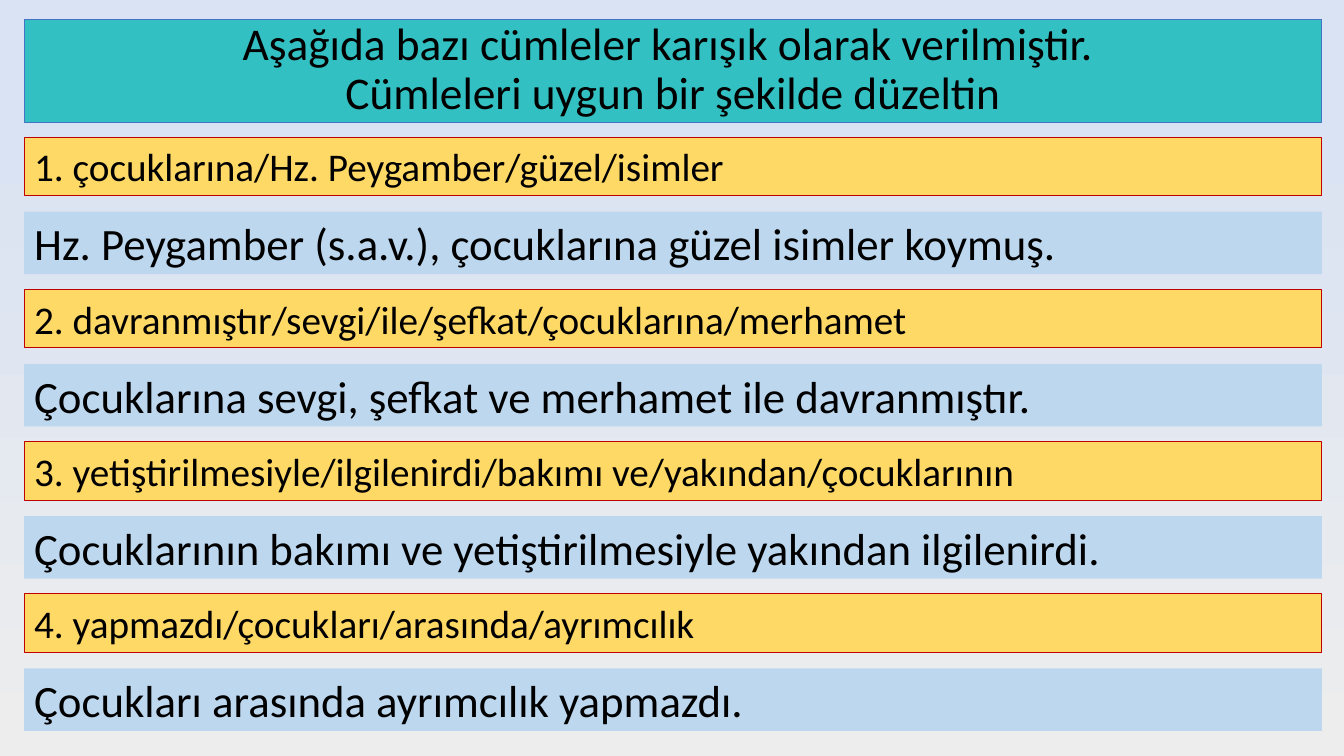
from dataclasses import dataclass

from pptx import Presentation
from pptx.dml.color import RGBColor
from pptx.enum.shapes import MSO_SHAPE
from pptx.enum.text import MSO_ANCHOR, PP_ALIGN
from pptx.util import Inches, Pt


@dataclass(frozen=True)
class Theme:
    font: str = "Calibri"
    ink: str = "000000"
    head: str = "33C0C2"
    rim: str = "4472C4"
    task: str = "FFD966"
    edge: str = "C00000"
    reply: str = "BDD7EE"
    base: str = "EDEDED"
    sky: str = "DAE3F3"
    title: float = 32.4
    ask: float = 28
    answer: float = 32


THEME = Theme()

TITLE = [
    "Aşağıda bazı cümleler karışık olarak verilmiştir. ",
    "Cümleleri uygun bir şekilde düzeltin",
]

PAIRS = [
    ("1. çocuklarına/Hz. Peygamber/güzel/isimler",
     "Hz. Peygamber (s.a.v.), çocuklarına güzel isimler koymuş."),
    ("2. davranmıştır/sevgi/ile/şefkat/çocuklarına/merhamet",
     "Çocuklarına sevgi, şefkat ve merhamet ile davranmıştır."),
    ("3. yetiştirilmesiyle/ilgilenirdi/bakımı ve/yakından/çocuklarının",
     "Çocuklarının bakımı ve yetiştirilmesiyle yakından ilgilenirdi."),
    ("4. yapmazdı/çocukları/arasında/ayrımcılık",
     "Çocukları arasında ayrımcılık yapmazdı."),
]


def paint(slide):
    fill = slide.background.fill
    fill.gradient()
    fill.gradient_angle = 90
    stops = zip(fill.gradient_stops, (0, 0.84), (THEME.base, THEME.sky))
    for stop, place, color in stops:
        stop.position = place
        stop.color.rgb = RGBColor.from_string(color)


def add_bar(slide, box, lines, size, fill, edge=None, align=PP_ALIGN.LEFT):
    bar = slide.shapes.add_shape(MSO_SHAPE.RECTANGLE, *map(Inches, box))
    bar.shadow.inherit = False
    bar.fill.solid()
    bar.fill.fore_color.rgb = RGBColor.from_string(fill)
    if edge:
        bar.line.color.rgb = RGBColor.from_string(edge)
        bar.line.width = Pt(0.5)
    else:
        bar.line.fill.background()
    frame = bar.text_frame
    frame.word_wrap = True
    frame.vertical_anchor = MSO_ANCHOR.MIDDLE
    para = frame.paragraphs[0]
    para.alignment = align
    for row, text in enumerate(lines):
        if row:
            para.add_line_break()
        run = para.add_run()
        run.text = text
        run.font.name = THEME.font
        run.font.size = Pt(size)
        run.font.color.rgb = RGBColor.from_string(THEME.ink)
    return para


def add_head(slide, box):
    para = add_bar(slide, box, TITLE, THEME.title, THEME.head, THEME.rim,
                   PP_ALIGN.CENTER)
    para.line_spacing = 0.9


def add_pair(slide, box, ask, answer):
    left, top, width, height = box
    reply = 0.62
    add_bar(slide, (left, top + height - reply, width, reply), [answer],
            THEME.answer, THEME.reply)
    add_bar(slide, (left, top, width, 0.58), [ask],
            THEME.ask, THEME.task, THEME.edge)


def main():
    deck = Presentation()
    deck.slide_width = Inches(13.33)
    deck.slide_height = Inches(7.5)
    slide = deck.slides.add_slide(deck.slide_layouts[6])
    paint(slide)
    left, width = 0.24, 12.87
    add_head(slide, (left, 0.19, width, 1.02))
    for row, (ask, answer) in enumerate(PAIRS):
        add_pair(slide, (left, 1.36 + 1.51 * row, width, 1.36), ask, answer)
    deck.save("out.pptx")


if __name__ == "__main__":
    main()
